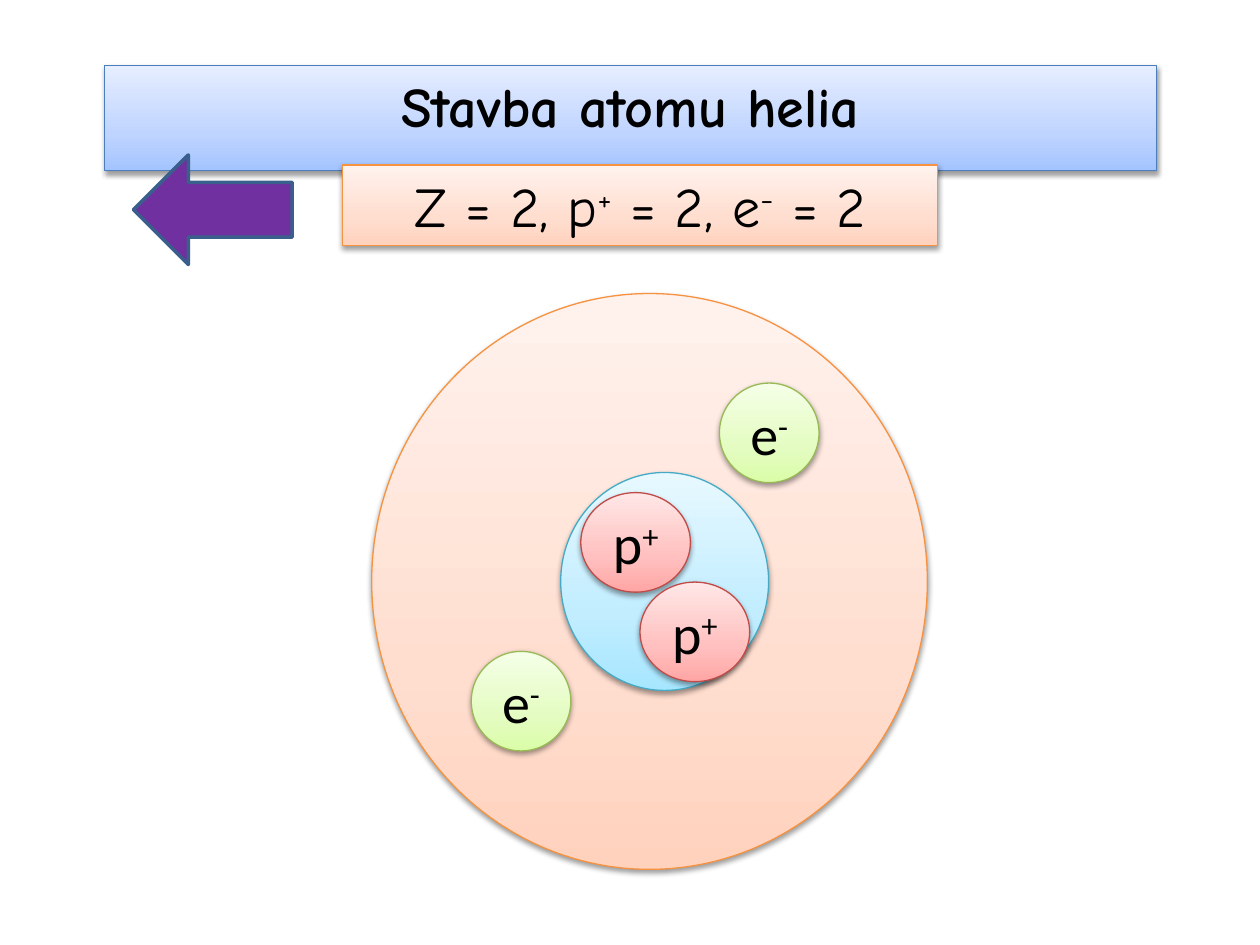
import pptx
import pptx.util
import pptx.dml.color
import pptx.enum.shapes
import pptx.enum.text
import pptx.oxml
import pptx.oxml.ns

Inches = pptx.util.Inches
SHAPES = pptx.enum.shapes.MSO_SHAPE
ANCHOR = pptx.enum.text.MSO_ANCHOR
rgb = pptx.dml.color.RGBColor.from_string

# Each palette: gradient from bottom to top, then outline
THEME = {
    "blue": (("A4C4FF", "BFD4FF", "E6EEFF"), "4B7EBC"),
    "orange": (("FFD2BD", "FFDED0", "FFF2ED"), "F69240"),
    "aqua": (("A7E6FF", "C1EDFF", "E7F8FF"), "46AAC5"),
    "red": (("FFA6A5", "FFC0BF", "FFE7E7"), "BF4C48"),
    "green": (("DAFDA7", "E4FCC2", "F5FFE7"), "98B955"),
    "arrow": ("7030A0", "3A5F8C"),
    "text": "000000",
    "size": 32,
    "heading font": "Comic Neue",
    "particle font": "Calibri",
}
STOP_POSITIONS = (0, 35, 100)
NAMESPACE = pptx.oxml.ns.nsdecls("a")


def style_shape(shape, palette):
    """Give the shape a three-stop gradient, a thin outline and a soft shadow."""
    colors, outline = THEME[palette]
    shape.fill.gradient()
    shape.fill.gradient_angle = 90
    stops = shape._element.spPr.find(".//" + pptx.oxml.ns.qn("a:gsLst"))
    for stop in list(stops):
        stops.remove(stop)
    for position, color in zip(STOP_POSITIONS, colors):
        stops.append(pptx.oxml.parse_xml(
            f'<a:gs {NAMESPACE} pos="{position * 1000}"><a:srgbClr val="{color}"/></a:gs>'))
    shape.line.color.rgb = rgb(outline)
    shape.line.width = pptx.util.Pt(0.75)
    shape.shadow.inherit = False
    effects = shape._element.spPr.find(pptx.oxml.ns.qn("a:effectLst"))
    effects.append(pptx.oxml.parse_xml(
        f'<a:outerShdw {NAMESPACE} blurRad="40000" dist="20000" dir="5400000" rotWithShape="0">'
        '<a:srgbClr val="000000"><a:alpha val="38000"/></a:srgbClr></a:outerShdw>'))


def write_text(shape, parts, font_name, anchor, bold=False):
    """Write centred text; every second part is a superscript."""
    shape.text_frame.word_wrap = True
    shape.text_frame.vertical_anchor = anchor
    paragraph = shape.text_frame.paragraphs[0]
    paragraph.alignment = pptx.enum.text.PP_ALIGN.CENTER
    for index, part in enumerate(parts):
        run = paragraph.add_run()
        run.text = part
        run.font.name = font_name
        run.font.size = pptx.util.Pt(THEME["size"])
        run.font.bold = bold
        run.font.color.rgb = rgb(THEME["text"])
        if index % 2:
            run.font._element.set("baseline", "30000")


presentation = pptx.Presentation()
presentation.slide_width, presentation.slide_height = Inches(10), Inches(7.5)
slide = presentation.slides.add_slide(presentation.slide_layouts[5])

# Title bar
title = slide.shapes.title
title.left, title.top = Inches(0.83), Inches(0.52)
title.width, title.height = Inches(8.35), Inches(0.64)
style_shape(title, "blue")
write_text(title, ["Stavba atomu helia"], THEME["heading font"], ANCHOR.TOP, bold=True)

# Particle counts
counts = slide.shapes.add_shape(
    SHAPES.RECTANGLE, Inches(2.72), Inches(1.31), Inches(4.72), Inches(0.64))
style_shape(counts, "orange")
write_text(counts, ["Z = 2, p", "+", " = 2, e", "-", " = 2"],
           THEME["heading font"], ANCHOR.TOP)

for box in (title, counts):
    box.text_frame.auto_size = pptx.enum.text.MSO_AUTO_SIZE.SHAPE_TO_FIT_TEXT

# Atom: shell, nucleus, protons and electrons
proton, electron = (0.87, 0.79), (0.79, 0.79)
circles = [
    (2.95, 2.33, (4.41, 4.57), "orange", []),
    (4.45, 3.75, (1.65, 1.73), "aqua", []),
    (4.61, 3.91, proton, "red", ["p", "+"]),
    (5.08, 4.62, proton, "red", ["p", "+"]),
    (5.71, 3.04, electron, "green", ["e", "-"]),
    (3.74, 5.17, electron, "green", ["e", "-"]),
]
for left, top, (width, height), palette, label in circles:
    circle = slide.shapes.add_shape(
        SHAPES.OVAL, Inches(left), Inches(top), Inches(width), Inches(height))
    style_shape(circle, palette)
    if label:
        write_text(circle, label, THEME["particle font"], ANCHOR.MIDDLE)

# Back arrow
arrow = slide.shapes.add_shape(
    SHAPES.LEFT_ARROW, Inches(1.06), Inches(1.23), Inches(1.26), Inches(0.87))
arrow_fill, arrow_outline = THEME["arrow"]
arrow.fill.solid()
arrow.fill.fore_color.rgb = rgb(arrow_fill)
arrow.line.color.rgb = rgb(arrow_outline)
arrow.line.width = pptx.util.Pt(2)
arrow.shadow.inherit = False

presentation.save("out.pptx")
